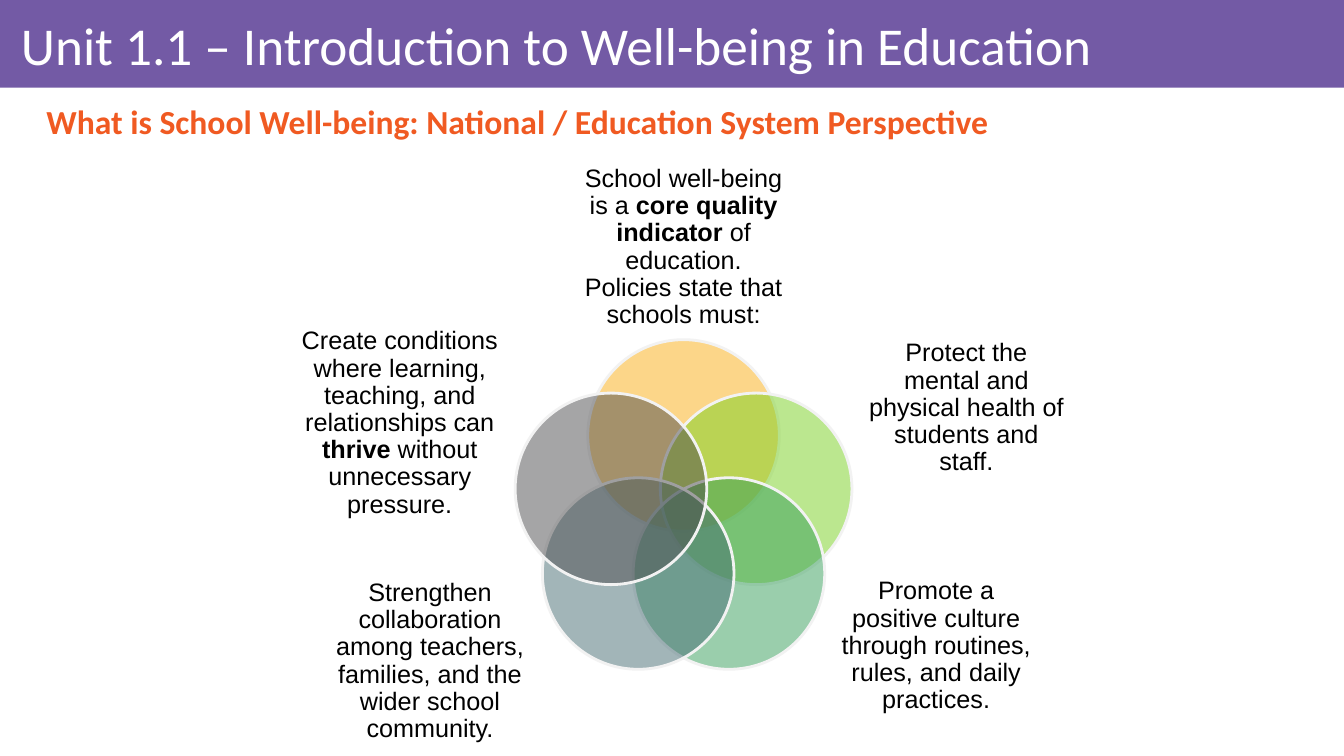
"""Builds the slide on school well-being with five overlapping circles."""
import math

from lxml import etree
from pptx import Presentation
from pptx import util as u
from pptx.dml.color import RGBColor
from pptx.enum import shapes, text
from pptx.oxml.ns import qn

PX = 9144
COLOURS = {
    "banner": "735AA5", "title": "FFFFFF", "heading": "F05A22",
    "body": "000000", "outline": "F2F2F2", "amber": "FAAE15",
    "lime": "79D121", "green": "369F5A", "teal": "466C73", "grey": "4D4D4F",
}
FORMATS = {
    "title": {"name": "Calibri", "size": u.Pt(38), "bold": False},
    "heading": {"name": "Calibri", "size": u.Pt(24), "bold": True},
    "body": {"name": "Arial", "size": u.Pt(18), "bold": False},
}
CENTRE_X, CENTRE_Y, ORBIT, DIAMETER = 678, 508, 76, 190
PETALS = [
    ("amber", (568, 182, 220, 127),
     "School well-being is a **core quality indicator** of education.\n"
     "Policies state that schools must:"),
    ("lime", (860, 336, 197, 138),
     "Protect the mental and physical health of students and staff."),
    ("green", (830, 572, 197, 138),
     "Promote a positive culture through routines, rules, and daily practices."),
    ("teal", (328, 587, 197, 138),
     "Strengthen collaboration among teachers, families, and the wider school community."),
    ("grey", (298, 351, 197, 138),
     "Create conditions where learning, teaching, and relationships can "
     "**thrive** without unnecessary pressure."),
]


class SlideBuilder:
    def __init__(self, deck):
        self.page = deck.slides.add_slide(deck.slide_layouts[6])

    def colour(self, name):
        return RGBColor.from_string(COLOURS[name])

    def shape(self, kind, bounds, fill, outline=None, opacity=100):
        item = self.page.shapes.add_shape(kind, *(v * PX for v in bounds))
        item.shadow.inherit = False
        item.fill.solid()
        item.fill.fore_color.rgb = self.colour(fill)
        if opacity < 100:
            tint = item.fill._xPr.find(qn("a:solidFill"))[0]
            etree.SubElement(tint, qn("a:alpha"), val=str(opacity * 1000))
        if outline:
            item.line.color.rgb = self.colour(outline)
            item.line.width = u.Pt(2)
        else:
            item.line.fill.background()

    def label(self, bounds, words, style, align, insets=(0, 0, 0, 0)):
        box = self.page.shapes.add_textbox(*(v * PX for v in bounds))
        frame = box.text_frame
        frame.word_wrap = True
        frame.vertical_anchor = text.MSO_ANCHOR.MIDDLE
        for side, inset in zip(("left", "top", "right", "bottom"), insets):
            setattr(frame, f"margin_{side}", inset * PX)
        for index, line in enumerate(words.split("\n")):
            para = frame.add_paragraph() if index else frame.paragraphs[0]
            para.alignment = align
            para.line_spacing = 0.9
            for part, wording in enumerate(line.split("**")):
                span = para.add_run()
                span.text = wording
                for key, value in FORMATS[style].items():
                    setattr(span.font, key, value)
                if part % 2:
                    span.font.bold = True
                span.font.color.rgb = self.colour(style)

    def petal(self, index, fill):
        angle = math.tau * index / len(PETALS)
        left = round(CENTRE_X + ORBIT * math.sin(angle) - DIAMETER / 2)
        top = round(CENTRE_Y - ORBIT * math.cos(angle) - DIAMETER / 2)
        self.shape(shapes.MSO_SHAPE.OVAL, (left, top, DIAMETER, DIAMETER),
                   fill, "outline", 50)


def main():
    deck = Presentation()
    deck.slide_width, deck.slide_height = u.Inches(13.33), u.Inches(7.5)
    builder = SlideBuilder(deck)
    builder.shape(shapes.MSO_SHAPE.RECTANGLE, (0, 0, 1333, 87), "banner")
    builder.label((11, 9, 1306, 78), "Unit 1.1 – Introduction to Well-being in Education",
                  "title", text.PP_ALIGN.LEFT, (10, 6, 6, 6))
    builder.label((11, 93, 1306, 60),
                  "What is School Well-being: National / Education System Perspective",
                  "heading", text.PP_ALIGN.JUSTIFY, (35, 5, 10, 5))
    for index, (fill, bounds, words) in enumerate(PETALS):
        builder.petal(index, fill)
        builder.label(bounds, words, "body", text.PP_ALIGN.CENTER)
    deck.save("out.pptx")


if __name__ == "__main__":
    main()
